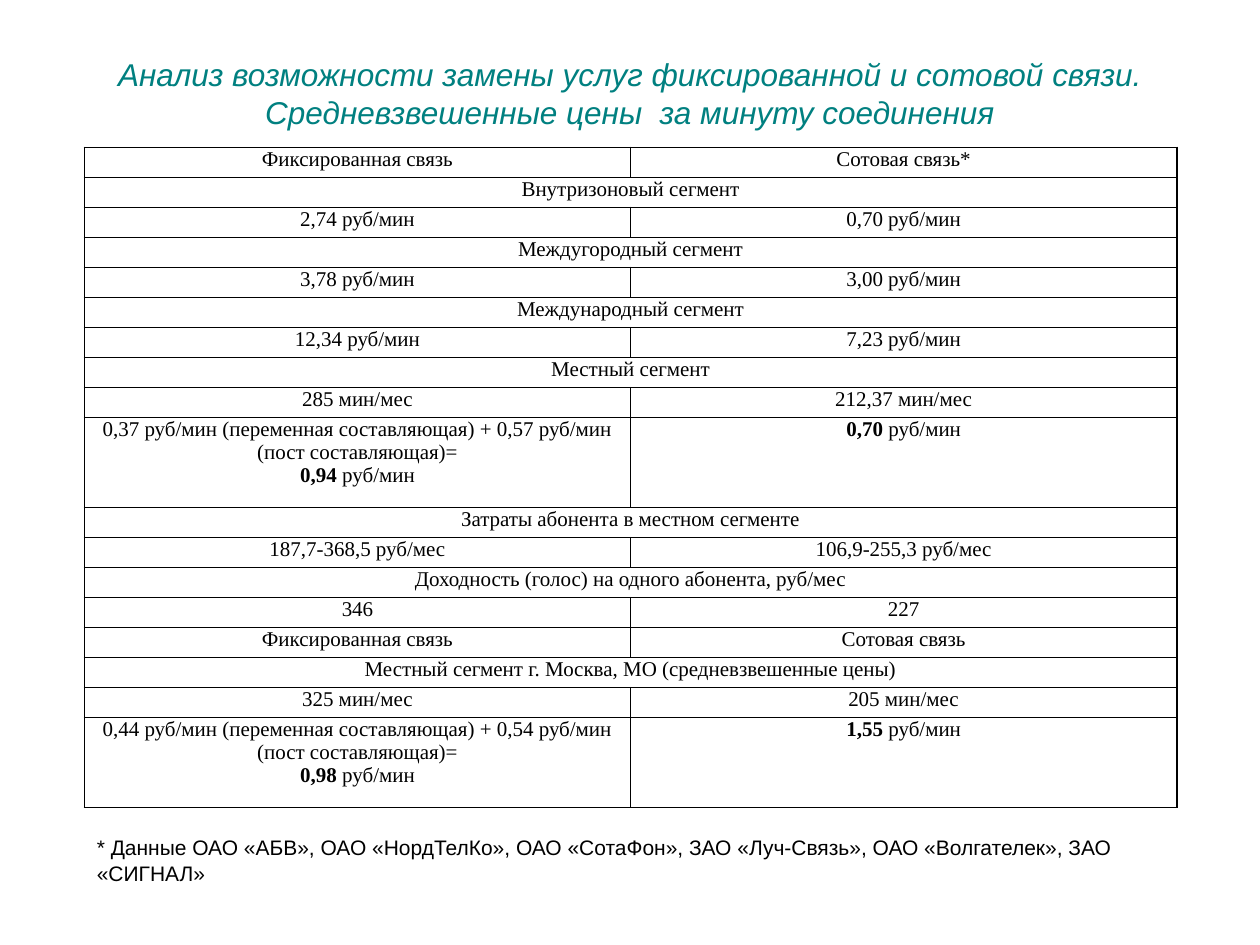
from lxml.etree import SubElement
from pptx import Presentation
from pptx.dml.color import RGBColor
from pptx.enum.text import MSO_ANCHOR as ANCHOR, PP_ALIGN as ALIGN
from pptx.oxml.ns import qn
from pptx.util import Inches, Pt

SLIDE_W, SLIDE_H = 10, 7.5
TITLE_BOX = (0.05, 0.04, 0.9, 0.116)  # shares of the slide's size
TABLE_BOX = (0.067, 0.156, 0.867, 0.699)
NOTE_BOX = (0.067, 0.877, 0.875, 0.068)

TITLE = ("Анализ возможности замены услуг фиксированной и сотовой связи. "
         "Средневзвешенные цены  за минуту соединения")
NOTE = ("* Данные ОАО «АБВ», ОАО «НордТелКо», ОАО «СотаФон», ЗАО «Луч-Связь», "
        "ОАО «Волгателек», ЗАО «СИГНАЛ»")

# One text spans both columns; ** marks bold, a newline starts a paragraph.
ROWS = [
    ("Фиксированная связь", "Сотовая связь*"),
    ("Внутризоновый сегмент",),
    ("2,74 руб/мин", "0,70 руб/мин"),
    ("Междугородный сегмент",),
    ("3,78 руб/мин", "3,00 руб/мин"),
    ("Международный сегмент",),
    ("12,34 руб/мин", "7,23 руб/мин"),
    ("Местный сегмент",),
    ("285 мин/мес", "212,37 мин/мес"),
    ("0,37 руб/мин (переменная составляющая) + 0,57 руб/мин "
     "(пост составляющая)=\n**0,94** руб/мин", "**0,70** руб/мин"),
    ("Затраты абонента в местном сегменте",),
    ("187,7-368,5 руб/мес", "106,9-255,3 руб/мес"),
    ("Доходность (голос) на одного абонента, руб/мес",),
    ("346", "227"),
    ("Фиксированная связь", "Сотовая связь"),
    ("Местный сегмент г. Москва, МО (средневзвешенные цены)",),
    ("325 мин/мес", "205 мин/мес"),
    ("0,44 руб/мин (переменная составляющая) + 0,54 руб/мин "
     "(пост составляющая)=\n**0,98** руб/мин", "**1,55** руб/мин"),
]
TALL = 3  # units of height for a row with a calculation

TITLE_FONT = dict(name="Arial", size=Pt(18), italic=True)
NOTE_FONT = dict(name="Arial", size=Pt(12))
CELL_FONT = dict(name="Times New Roman", size=Pt(12))
CELL_FORMAT = dict(margin_left=Inches(0.07), margin_right=Inches(0.07),
                   margin_top=0, margin_bottom=0, vertical_anchor=ANCHOR.TOP)


def rgb(value):
    return RGBColor.from_string(value)


def set_all(obj, values):
    for name, value in values.items():
        setattr(obj, name, value)


def to_lengths(box):
    return [Inches(share * side)
            for share, side in zip(box, (SLIDE_W, SLIDE_H) * 2)]


def write(tf, text, font, color, align):
    for i, line in enumerate(text.split("\n")):
        p = tf.paragraphs[0] if i == 0 else tf.add_paragraph()
        p.alignment = align
        for j, part in enumerate(line.split("**")):
            if part:
                r = p.add_run()
                r.text = part
                set_all(r.font, font)
                r.font.color.rgb = rgb(color)
                if j % 2:
                    r.font.bold = True


def add_text(slide, box, text, font, color, align, anchor):
    tf = slide.shapes.add_textbox(*to_lengths(box)).text_frame
    set_all(tf, dict(word_wrap=True, vertical_anchor=anchor))
    write(tf, text, font, color, align)


def add_borders(cell, color, width):
    tc_pr = cell._tc.get_or_add_tcPr()
    for side in ("L", "R", "T", "B"):
        ln = SubElement(tc_pr, qn(f"a:ln{side}"), w=str(Pt(width)))
        fill = SubElement(ln, qn("a:solidFill"))
        SubElement(fill, qn("a:srgbClr"), val=color)


def add_price_table(slide, box):
    x, y, w, h = to_lengths(box)
    table = slide.shapes.add_table(len(ROWS), 2, x, y, w, h).table
    set_all(table, dict(first_row=False, horz_banding=False))
    units = [TALL if "\n" in texts[0] else 1 for texts in ROWS]
    for i, (texts, unit) in enumerate(zip(ROWS, units)):
        table.rows[i].height = h * unit // sum(units)
        for cell in table.rows[i].cells:
            set_all(cell, CELL_FORMAT)
            add_borders(cell, "000000", 1)
            cell.fill.solid()
            cell.fill.fore_color.rgb = rgb("FFFFFF")
        if len(texts) == 1:
            table.cell(i, 0).merge(table.cell(i, 1))
        for j, text in enumerate(texts):
            write(table.cell(i, j).text_frame, text, CELL_FONT, "000000",
                  ALIGN.CENTER)


def main():
    prs = Presentation()
    prs.slide_width, prs.slide_height = Inches(SLIDE_W), Inches(SLIDE_H)
    slide = prs.slides.add_slide(prs.slide_layouts[6])
    add_text(slide, TITLE_BOX, TITLE, TITLE_FONT, "008080",
             ALIGN.CENTER, ANCHOR.MIDDLE)
    add_price_table(slide, TABLE_BOX)
    add_text(slide, NOTE_BOX, NOTE, NOTE_FONT, "000000",
             ALIGN.LEFT, ANCHOR.TOP)
    prs.save("out.pptx")


if __name__ == "__main__":
    main()
